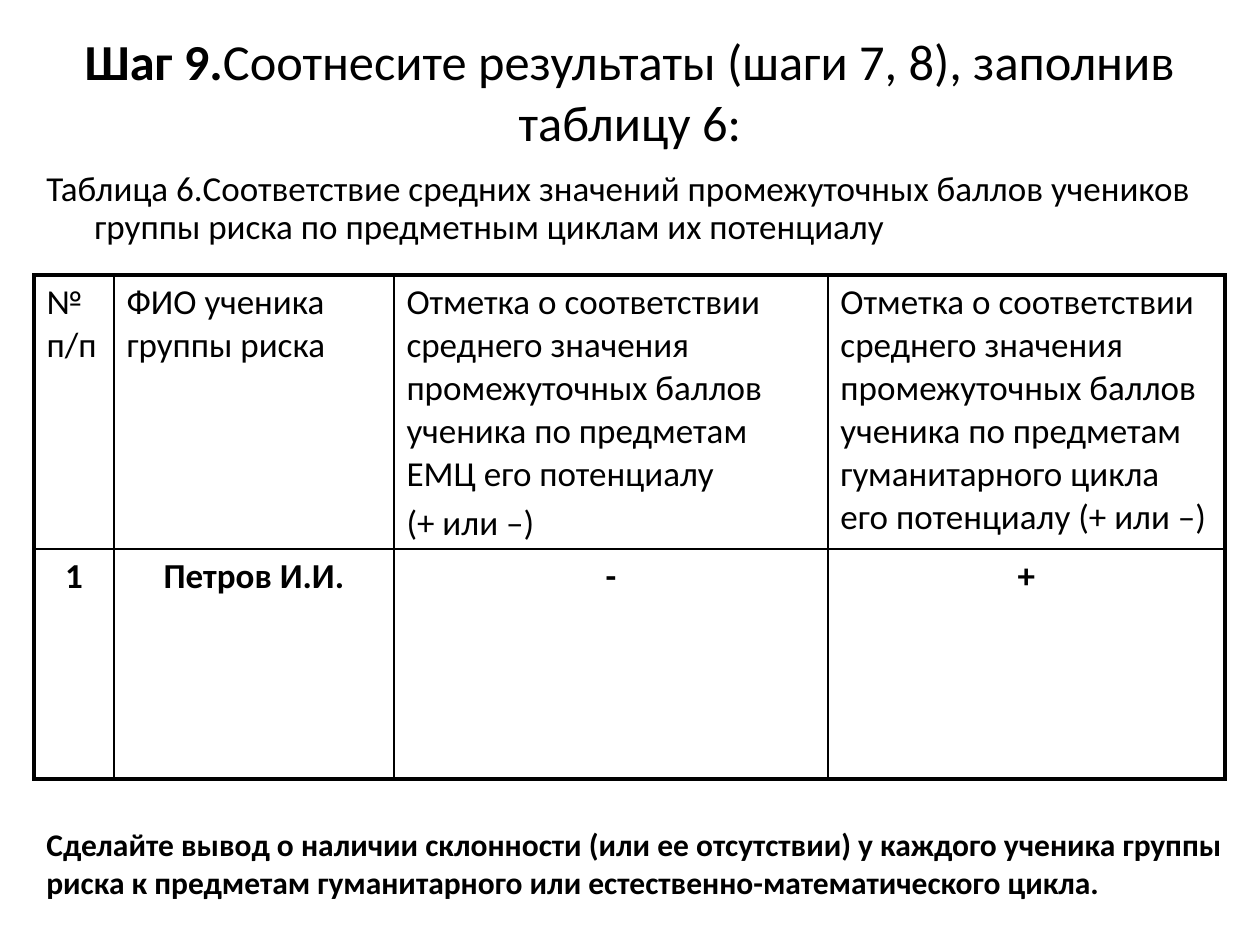
import pptx
import pptx.dml.color
import pptx.enum.text
import pptx.oxml.ns
import pptx.util
from dataclasses import dataclass
from lxml import etree

PX_PER_INCH = 126
Align = pptx.enum.text.PP_ALIGN
Anchor = pptx.enum.text.MSO_ANCHOR


@dataclass(frozen=True)
class Theme:
    font: str = "Calibri"
    ink: str = "000000"
    paper: str = "FFFFFF"
    title_size: float = 28.8
    body_size: int = 20
    conclusion_size: int = 18
    paragraph_gap: int = 4
    outer_border: float = 2.25
    inner_border: int = 1


THEME = Theme()

COLUMN_WIDTHS = [80, 280, 434, 397]
ROW_HEIGHTS = [274, 230]
MARK = "Отметка о соответствии среднего значения промежуточных баллов ученика по предметам "
# Each cell is a list of paragraphs
HEADINGS = [
    ["№ п/п"],
    ["ФИО ученика группы риска"],
    [MARK + "ЕМЦ его потенциалу", "(+ или –)"],
    [MARK + "гуманитарного цикла его потенциалу (+ или –)"],
]
PUPIL = [["1"], ["Петров И.И."], ["-"], ["+"]]


def px(length):
    return pptx.util.Emu(round(length * 914400 / PX_PER_INCH))


def color(value):
    return pptx.dml.color.RGBColor.from_string(value)


def add_run(paragraph, text, size, bold=False):
    run = paragraph.add_run()
    run.text = text
    run.font.name = THEME.font
    run.font.size = pptx.util.Pt(size)
    run.font.bold = bold
    run.font.color.rgb = color(THEME.ink)


def add_title(slide, left, top, width, height, runs):
    title = slide.shapes.title
    title.left, title.top, title.width, title.height = map(px, (left, top, width, height))
    frame = title.text_frame
    frame.auto_size = pptx.enum.text.MSO_AUTO_SIZE.NONE
    frame.word_wrap = True
    frame.vertical_anchor = Anchor.MIDDLE
    # The text sits in the upper part of the title area
    frame.margin_top, frame.margin_bottom = 0, px(51)
    paragraph = frame.paragraphs[0]
    paragraph.alignment = Align.CENTER
    for text, bold in runs:
        add_run(paragraph, text, THEME.title_size, bold)


def add_text(slide, left, top, width, height, text, size, bold=False,
             align=Align.LEFT, anchor=Anchor.TOP):
    frame = slide.shapes.add_textbox(*map(px, (left, top, width, height))).text_frame
    frame.word_wrap = True
    frame.vertical_anchor = anchor
    paragraph = frame.paragraphs[0]
    paragraph.alignment = align
    add_run(paragraph, text, size, bold)
    return paragraph


def set_hanging_indent(paragraph, indent):
    properties = paragraph._p.get_or_add_pPr()
    properties.set("marL", str(px(indent)))
    properties.set("indent", str(-px(indent)))


def set_borders(cell, outer_sides):
    properties = cell._tc.get_or_add_tcPr()
    qn = pptx.oxml.ns.qn
    for side in "LRTB":
        width = THEME.outer_border if side in outer_sides else THEME.inner_border
        line = etree.SubElement(properties, qn(f"a:ln{side}"), w=str(pptx.util.Pt(width)))
        fill = etree.SubElement(line, qn("a:solidFill"))
        etree.SubElement(fill, qn("a:srgbClr"), val=THEME.ink)


def fill_cell(cell, texts, bold, align):
    cell.fill.solid()
    cell.fill.fore_color.rgb = color(THEME.paper)
    frame = cell.text_frame
    for index, text in enumerate(texts):
        paragraph = frame.add_paragraph() if index else frame.paragraphs[0]
        if index:
            paragraph.space_before = pptx.util.Pt(THEME.paragraph_gap)
        paragraph.alignment = align
        add_run(paragraph, text, THEME.body_size, bold)


def add_results_table(slide, left, top, rows):
    last_row, last_column = len(ROW_HEIGHTS) - 1, len(COLUMN_WIDTHS) - 1
    table = slide.shapes.add_table(
        len(ROW_HEIGHTS), len(COLUMN_WIDTHS), px(left), px(top),
        px(sum(COLUMN_WIDTHS)), px(sum(ROW_HEIGHTS))).table
    table.first_row = table.horz_banding = False
    for column, width in zip(table.columns, COLUMN_WIDTHS):
        column.width = px(width)
    for r, texts in enumerate(rows):
        table.rows[r].height = px(ROW_HEIGHTS[r])
        for c, paragraphs in enumerate(texts):
            edges = {"L": c == 0, "R": c == last_column, "T": r == 0, "B": r == last_row}
            cell = table.cell(r, c)
            set_borders(cell, [side for side, outer in edges.items() if outer])
            fill_cell(cell, paragraphs, bold=r > 0, align=Align.CENTER if r else Align.LEFT)


def main():
    deck = pptx.Presentation()
    deck.slide_width, deck.slide_height = px(1260), px(945)
    slide = deck.slides.add_slide(deck.slide_layouts[5])

    # Step heading
    add_title(slide, 63, 38, 1134, 157, [
        ("Шаг 9.", True),
        ("Соотнесите результаты (шаги 7, 8), заполнив таблицу 6:", False),
    ])

    # Table caption
    caption = add_text(
        slide, 34, 165, 1191, 93,
        "Таблица 6.Соответствие средних значений промежуточных баллов учеников "
        "группы риска по предметным циклам их потенциалу", THEME.body_size)
    caption.line_spacing = 0.9
    set_hanging_indent(caption, 48)

    # Results by pupil
    add_results_table(slide, 34, 275, [HEADINGS, PUPIL])

    # Conclusion
    add_text(
        slide, 34, 800, 1201, 126,
        "Сделайте вывод о наличии склонности (или ее отсутствии) у каждого ученика группы "
        "риска к предметам гуманитарного или естественно-математического цикла.",
        THEME.conclusion_size, bold=True, align=Align.JUSTIFY, anchor=Anchor.MIDDLE)

    deck.save("out.pptx")


if __name__ == "__main__":
    main()
